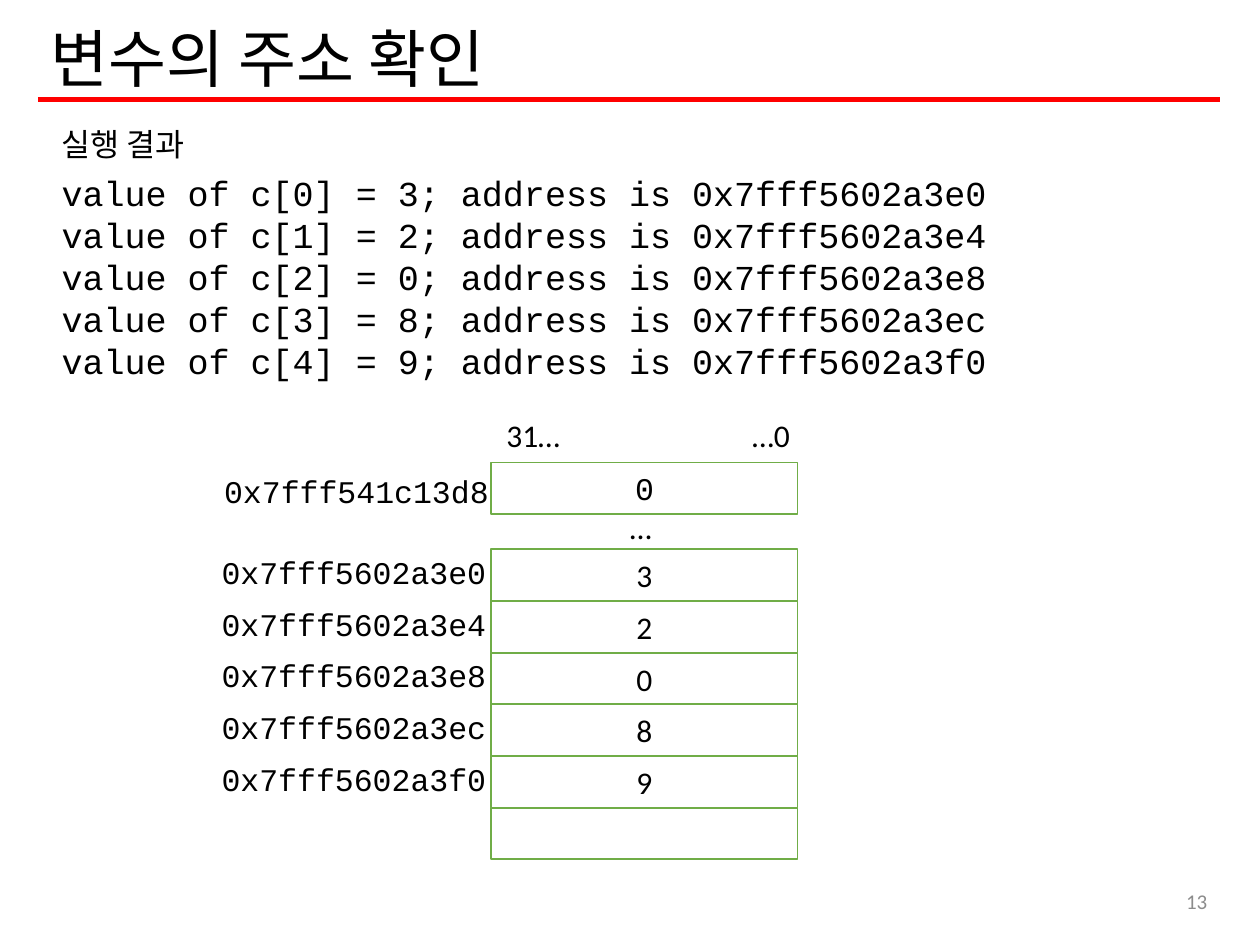
from dataclasses import dataclass

import pptx
import pptx.dml.color
import pptx.enum.shapes
import pptx.enum.text
import pptx.oxml.ns
import pptx.util
from lxml import etree
from pptx.util import Inches

COLORS = {"text": "000000", "rule": "FF0000", "cell": "FFFFFF",
          "border": "70AD47", "number": "8C8C8C"}
SANS, MONO = "Calibri", "Courier New"
ALIGN = pptx.enum.text.PP_ALIGN
ANCHOR = pptx.enum.text.MSO_ANCHOR
CELL_LEFT, CELL_WIDTH, CELL_HEIGHT = 3.9, 2.43, 0.41
ARRAY_TOP = 4.36


@dataclass
class Label:
    lines: list[str]
    left: float
    top: float
    width: float
    height: float = 0.4
    size: int = 18
    font: str = SANS
    color: str = "text"
    align: ALIGN = ALIGN.LEFT
    anchor: ANCHOR = ANCHOR.TOP
    wrap: bool = False
    spacing: float = 1.0


@dataclass
class Element:
    value: str
    address: str


def rgb(name: str) -> pptx.dml.color.RGBColor:
    return pptx.dml.color.RGBColor.from_string(COLORS[name])


def write(p, text: str, size: int, font: str, color: str) -> None:
    r = p.add_run()
    r.text = text
    r.font.size = pptx.util.Pt(size)
    r.font.name = font
    r.font.color.rgb = rgb(color)


def add_label(s, label: Label) -> None:
    sp = s.shapes.add_textbox(Inches(label.left), Inches(label.top),
                              Inches(label.width), Inches(label.height))
    tf = sp.text_frame
    tf.word_wrap = label.wrap
    tf.vertical_anchor = label.anchor
    for i, line in enumerate(label.lines):
        p = tf.add_paragraph() if i else tf.paragraphs[0]
        p.alignment = label.align
        p.line_spacing = label.spacing
        write(p, line, label.size, label.font, label.color)


def add_cell(s, top: float, value: str = "", font: str = SANS) -> None:
    sp = s.shapes.add_shape(pptx.enum.shapes.MSO_SHAPE.RECTANGLE,
                            Inches(CELL_LEFT), Inches(top),
                            Inches(CELL_WIDTH), Inches(CELL_HEIGHT))
    sp.shadow.inherit = False
    sp.fill.solid()
    sp.fill.fore_color.rgb = rgb("cell")
    sp.line.color.rgb = rgb("border")
    sp.line.width = pptx.util.Pt(1)
    if value:
        tf = sp.text_frame
        tf.vertical_anchor = ANCHOR.MIDDLE
        p = tf.paragraphs[0]
        p.alignment = ALIGN.CENTER
        write(p, value, 18, font, "text")


def add_rule(s) -> None:
    line = s.shapes.add_connector(pptx.enum.shapes.MSO_CONNECTOR.STRAIGHT,
                                  Inches(0.3), Inches(0.79), Inches(9.68), Inches(0.79))
    line.line.color.rgb = rgb("rule")
    line.line.width = pptx.util.Pt(3)
    etree.SubElement(line._element.spPr, pptx.oxml.ns.qn("a:effectLst"))


def main() -> None:
    prs = pptx.Presentation()
    prs.slide_width, prs.slide_height = Inches(10), Inches(7.5)
    s = prs.slides.add_slide(prs.slide_layouts[6])

    elements = [
        Element("3", "0x7fff5602a3e0"),
        Element("2", "0x7fff5602a3e4"),
        Element("0", "0x7fff5602a3e8"),
        Element("8", "0x7fff5602a3ec"),
        Element("9", "0x7fff5602a3f0"),
    ]
    output = [f"value of c[{i}] = {e.value}; address is {e.address}"
              for i, e in enumerate(elements)]

    add_rule(s)
    add_cell(s, 3.67, "0", MONO)
    for i, e in enumerate(elements):
        top = ARRAY_TOP + i * CELL_HEIGHT
        add_cell(s, top, e.value)
        add_label(s, Label([e.address], 1.66, top - 0.02, 2.31, font=MONO))
    add_cell(s, ARRAY_TOP + len(elements) * CELL_HEIGHT)

    labels = [
        Label(["변수의 주소 확인"], 0.3, 0.27, 9.38, 0.45, size=36,
              anchor=ANCHOR.MIDDLE, wrap=True, spacing=0.9),
        Label(["실행 결과"], 0.39, 0.94, 1.27),
        Label(output, 0.39, 1.31, 7.93, 1.78, size=20, font=MONO, wrap=True),
        Label(["31…"], 3.92, 3.25, 0.65),
        Label(["…0"], 5.87, 3.25, 0.52),
        Label(["0x7fff541c13d8"], 1.68, 3.7, 2.31, font=MONO),
        Label(["…"], 4.9, 3.98, 0.38),
        Label(["13"], 7.06, 6.95, 2.62, size=12, color="number",
              align=ALIGN.RIGHT, anchor=ANCHOR.MIDDLE, wrap=True),
    ]
    for label in labels:
        add_label(s, label)

    prs.save("out.pptx")


if __name__ == "__main__":
    main()
